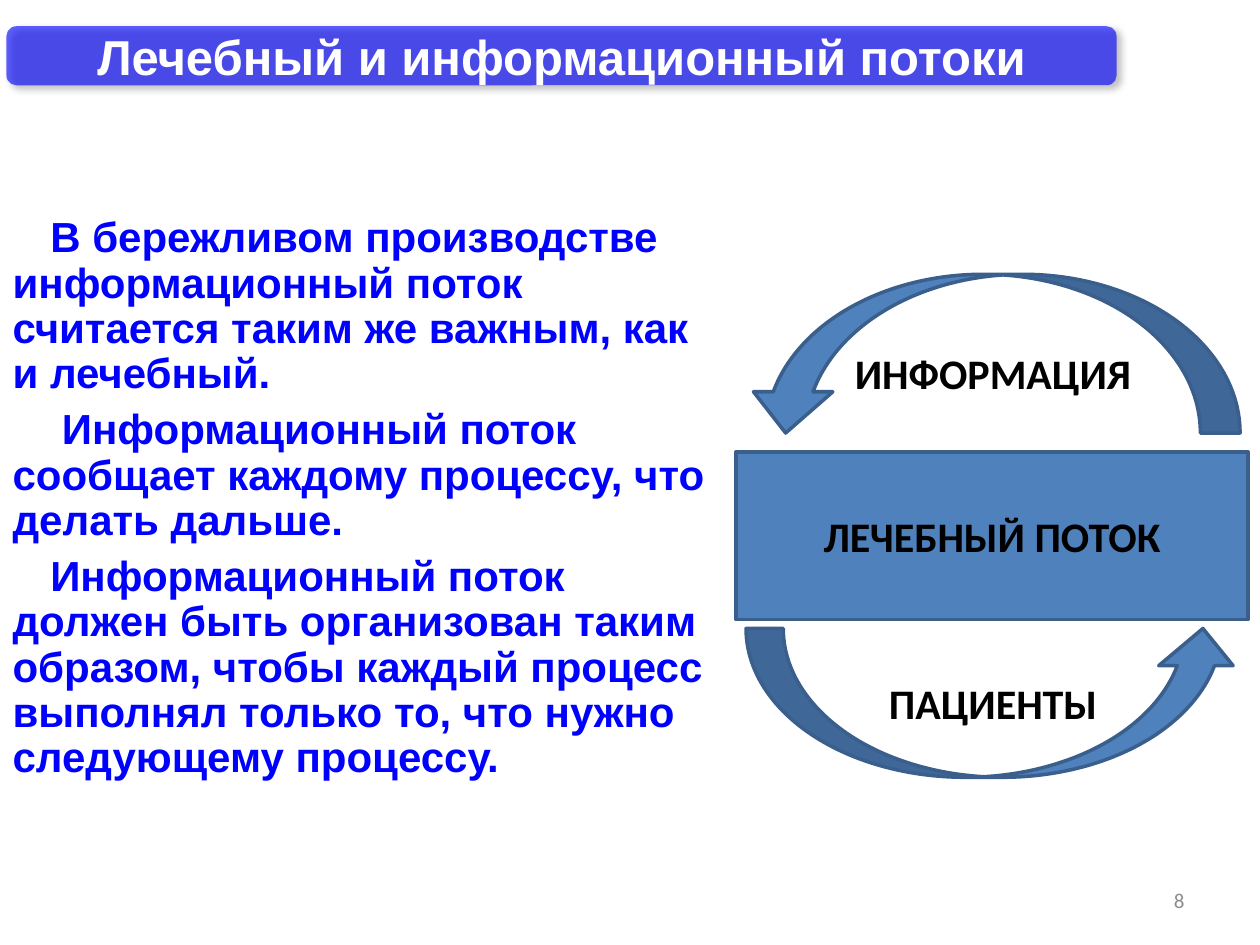
from lxml import etree
from pptx import Presentation
from pptx.dml.color import RGBColor
from pptx.enum.shapes import MSO_SHAPE
from pptx.enum.text import MSO_ANCHOR, MSO_AUTO_SIZE, PP_ALIGN
from pptx.oxml import parse_xml
from pptx.oxml.ns import nsdecls, qn
from pptx.util import Cm, Pt

ROUNDED, RECTANGLE = MSO_SHAPE.ROUNDED_RECTANGLE, MSO_SHAPE.RECTANGLE
ARROW_OVER, ARROW_UNDER = MSO_SHAPE.CURVED_DOWN_ARROW, MSO_SHAPE.CURVED_UP_ARROW
TOP, MIDDLE = MSO_ANCHOR.TOP, MSO_ANCHOR.MIDDLE
LEFT, CENTER, RIGHT = PP_ALIGN.LEFT, PP_ALIGN.CENTER, PP_ALIGN.RIGHT
FIT_SHAPE, NO_FIT = MSO_AUTO_SIZE.SHAPE_TO_FIT_TEXT, MSO_AUTO_SIZE.NONE

BLUE = RGBColor(0x00, 0x00, 0xFF)
STEEL = RGBColor(0x4F, 0x81, 0xBD)
STEEL_DARK = RGBColor(0x3A, 0x5F, 0x8C)
WHITE = RGBColor(0xFF, 0xFF, 0xFF)
BLACK = RGBColor(0x00, 0x00, 0x00)
GRAY = RGBColor(0x8C, 0x8C, 0x8C)

TITLE_BOX = (0.13, 0.53, 22.38, 1.19)
STATEMENTS = [
    "В бережливом производстве информационный поток считается таким же важным, как и лечебный.",
    " Информационный поток сообщает каждому процессу, что делать дальше.",
    "Информационный поток должен быть организован таким образом, чтобы каждый процесс "
    "выполнял только то, что нужно следующему процессу.",
]


def place(shape, box):
    shape.left, shape.top, shape.width, shape.height = map(Cm, box)


def write(paragraph, text, size=24, font="Arial", color=BLACK, bold=True, align=CENTER):
    paragraph.alignment = align
    run = paragraph.add_run()
    run.text = text
    run.font.size = Pt(size)
    run.font.name = font
    run.font.bold = bold
    run.font.color.rgb = color


def set_frame(frame, anchor=MIDDLE, fit=NO_FIT):
    frame.word_wrap = True
    frame.vertical_anchor = anchor
    frame.auto_size = fit


def add_title(slide):
    bar = slide.shapes.add_shape(ROUNDED, *map(Cm, TITLE_BOX))
    bar.fill.solid()
    bar.fill.fore_color.rgb = BLUE
    bar.line.fill.background()
    color = bar.fill._xPr.find(qn("a:solidFill"))[0]
    etree.SubElement(color, qn("a:alpha"), val="62000")
    bar._element.spPr.append(parse_xml(
        f'<a:effectLst {nsdecls("a")}><a:outerShdw blurRad="{Pt(4)}" dist="{Pt(3)}" '
        'dir="2700000" algn="tl" rotWithShape="0"><a:srgbClr val="000000">'
        '<a:alpha val="40000"/></a:srgbClr></a:outerShdw></a:effectLst>'))
    title = slide.shapes.title
    title._element.addprevious(bar._element)
    place(title, TITLE_BOX)
    set_frame(title.text_frame)
    write(title.text_frame.paragraphs[0], "Лечебный и информационный потоки",
          size=28, color=WHITE)


def add_statements(slide):
    body = slide.placeholders[1]
    place(body, (0, 4.24, 14.5, 11.76))
    frame = body.text_frame
    set_frame(frame, TOP, FIT_SHAPE)
    for index, statement in enumerate(STATEMENTS):
        paragraph = frame.add_paragraph() if index else frame.paragraphs[0]
        properties = paragraph._p.get_or_add_pPr()
        properties.set("marL", "0")
        properties.set("indent", str(Cm(0.76)))
        etree.SubElement(properties, qn("a:buNone"))
        paragraph.line_spacing = 0.9
        paragraph.space_before = Pt(6 if index else 0)
        write(paragraph, statement, color=BLUE, align=LEFT)


def add_flow_shape(diagram, kind, box, label):
    shape = diagram.shapes.add_shape(kind, *map(Cm, box))
    shape.shadow.inherit = False
    shape.fill.solid()
    shape.fill.fore_color.rgb = STEEL
    shape.line.color.rgb = STEEL_DARK
    shape.line.width = Pt(2)
    set_frame(shape.text_frame)
    write(shape.text_frame.paragraphs[0], label, font="Calibri")
    return shape


def add_flow_diagram(slide):
    diagram = slide.shapes.add_group_shape()
    add_flow_shape(diagram, RECTANGLE, (14.84, 9.11, 10.32, 3.38), "ЛЕЧЕБНЫЙ ПОТОК")
    information = add_flow_shape(diagram, ARROW_OVER, (15.04, 5.53, 9.96, 3.2), "ИНФОРМАЦИЯ")
    information.adjustments[2] = 0.26
    information.text_frame.margin_top = Cm(0.9)
    information._element.spPr.find(qn("a:xfrm")).set("flipH", "1")
    add_flow_shape(diagram, ARROW_UNDER, (15.04, 12.67, 9.96, 3), "ПАЦИЕНТЫ")


def add_page_number(slide):
    number = slide.shapes.add_textbox(*map(Cm, (18.2, 17.65, 5.93, 1.01)))
    set_frame(number.text_frame)
    write(number.text_frame.paragraphs[0], "8", size=12, font="Calibri",
          color=GRAY, bold=False, align=RIGHT)


def main():
    deck = Presentation()
    deck.slide_width, deck.slide_height = Cm(25.4), Cm(19.05)
    slide = deck.slides.add_slide(deck.slide_layouts[1])
    add_title(slide)
    add_statements(slide)
    add_flow_diagram(slide)
    add_page_number(slide)
    deck.save("out.pptx")


if __name__ == "__main__":
    main()
